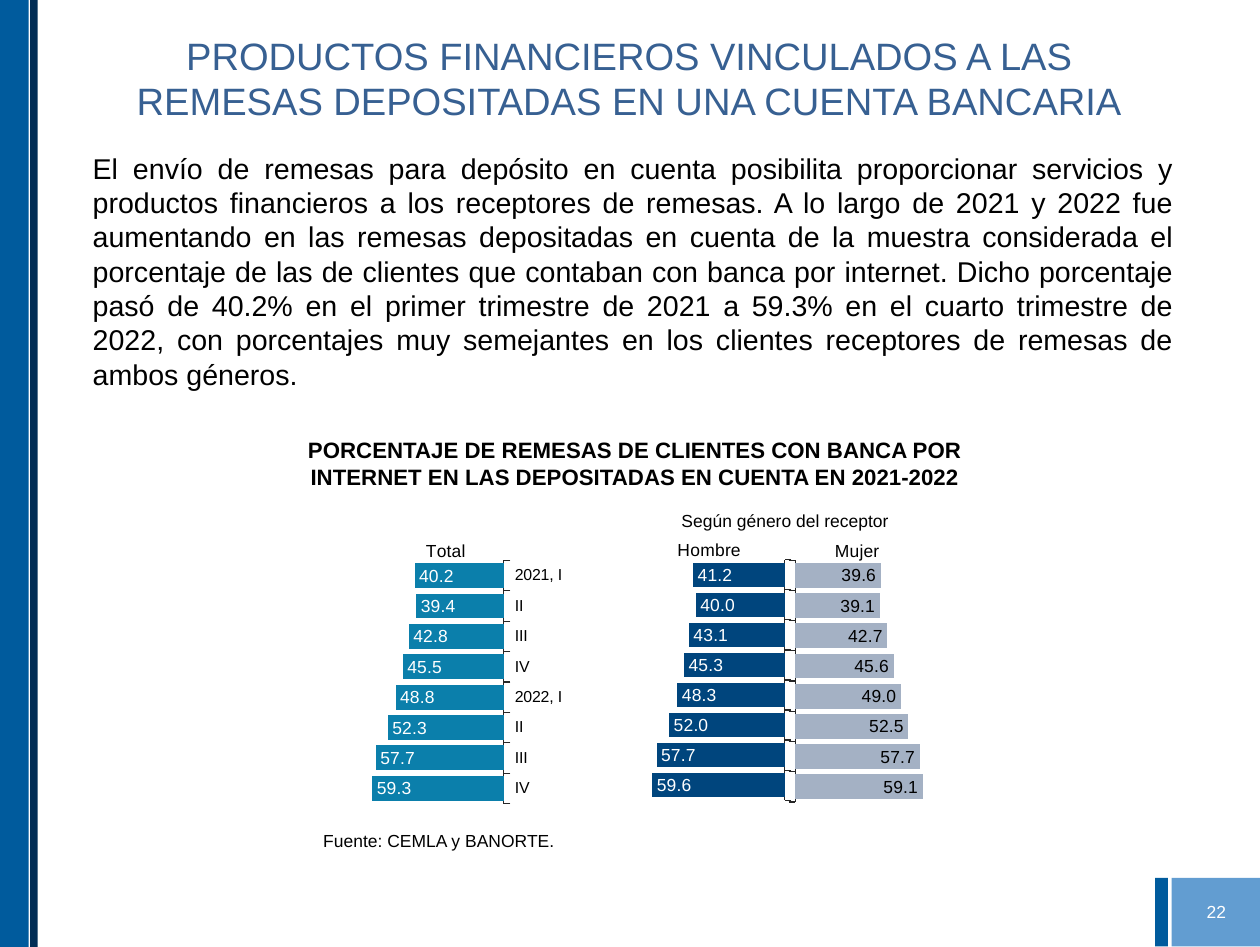
from lxml import etree
from pptx import Presentation
from pptx.chart.data import CategoryChartData
from pptx.dml.color import RGBColor
from pptx.enum import chart as ch, shapes, text
from pptx.oxml.ns import qn
from pptx.util import Pt

BLUE = RGBColor(0x00, 0x5B, 0x9D)
NAVY = RGBColor(0x01, 0x2D, 0x55)
SKY = RGBColor(0x62, 0x9D, 0xD1)
HEAD = RGBColor(0x37, 0x60, 0x92)
TEAL = RGBColor(0x0B, 0x7F, 0xAB)
DARK = RGBColor(0x00, 0x45, 0x7D)
GREY = RGBColor(0xA4, 0xB1, 0xC4)
AXIS = RGBColor(0x26, 0x26, 0x26)
BLACK = RGBColor(0, 0, 0)
WHITE = RGBColor(255, 255, 255)

WIDE, HIGH = 793.7, 596.6
TITLE = "PRODUCTOS FINANCIEROS VINCULADOS A LAS REMESAS DEPOSITADAS EN UNA CUENTA BANCARIA"
BODY = (
    "El envío de remesas para depósito en cuenta posibilita proporcionar servicios y "
    "productos financieros a los receptores de remesas. A lo largo de 2021 y 2022 fue "
    "aumentando en las remesas depositadas en cuenta de la muestra considerada el "
    "porcentaje de las de clientes que contaban con banca por internet. Dicho porcentaje "
    "pasó de 40.2% en el primer trimestre de 2021 a 59.3% en el cuarto trimestre de 2022, "
    "con porcentajes muy semejantes en los clientes receptores de remesas de ambos géneros."
)
CAPTION = ("PORCENTAJE DE REMESAS DE CLIENTES CON BANCA POR INTERNET "
           "EN LAS DEPOSITADAS EN CUENTA EN 2021-2022")
TERMS = ["2021, I", "II", "III", "IV", "2022, I", "II", "III", "IV"]
RANKS = [str(n) for n in range(1, 9)]

# Chart box, bar colour, label colour, title corner, plot area, axis options, values
CHARTS = {
    "Total": dict(
        box=(0, 0, 254.88, 193.68), fill=TEAL, ink=WHITE, corner=(0.265, 0.097),
        plot=(0, 0.177, 0.465, 0.791), flip=True, cats=TERMS,
        vals=(40.2, 39.4, 42.8, 45.5, 48.8, 52.3, 57.7, 59.3)),
    "Mujer": dict(
        box=(244.8, 9.36, 181.44, 183.6), fill=GREY, ink=BLACK, corner=(0.443, 0.05),
        plot=(0.317, 0.135, 0.636, 0.83), flip=False, cats=RANKS,
        vals=(39.6, 39.1, 42.7, 45.6, 49, 52.5, 57.7, 59.1)),
    "Hombre": dict(
        box=(167.76, 0, 255.6, 191.52), fill=DARK, ink=WHITE, corner=(0.228, 0.095),
        plot=(0.035, 0.177, 0.465, 0.791), flip=True, cats=RANKS,
        vals=(41.2, 40, 43.1, 45.3, 48.3, 52, 57.7, 59.6)),
}


def style(font, size, color, bold=False):
    look = dict(name="Arial", size=Pt(size), bold=bold)
    for key, val in look.items():
        setattr(font, key, val)
    font.color.rgb = color


def bar(slide, box, color):
    shape = slide.shapes.add_shape(shapes.MSO_SHAPE.RECTANGLE, *map(Pt, box))
    shape.shadow.inherit = False
    shape.fill.solid()
    shape.fill.fore_color.rgb = color
    shape.line.fill.background()


def write(slide, box, words, size, color=BLACK, align="CENTER", anchor="MIDDLE",
          bold=False):
    frame = slide.shapes.add_textbox(*map(Pt, box)).text_frame
    frame.word_wrap = True
    frame.vertical_anchor = getattr(text.MSO_ANCHOR, anchor)
    para = frame.paragraphs[0]
    para.text = words
    para.alignment = getattr(text.PP_ALIGN, align)
    style(para.runs[0].font, size, color, bold)


def node(tag, **attrs):
    return etree.Element(qn(tag), attrs)


def layout(host, spot, at, inner=False):
    """Give a chart part a manual place, in fractions of the chart."""
    for old in host.findall(qn("c:layout")):
        host.remove(old)
    outer, hand = node("c:layout"), node("c:manualLayout")
    outer.append(hand)
    if inner:
        hand.append(node("c:layoutTarget", val="inner"))
    for key in ("xMode", "yMode"):
        hand.append(node("c:" + key, val="edge"))
    for key, val in zip("xywh", spot):
        hand.append(node("c:" + key, val=str(val)))
    host.insert(at, outer)


def clear():
    props = node("c:spPr")
    props.append(node("a:noFill"))
    line = node("a:ln")
    line.append(node("a:noFill"))
    props.append(line)
    return props


def graph(slide, left, top, name, item):
    data = CategoryChartData(number_format="0.0")
    data.categories = item["cats"]
    data.add_series(name, item["vals"])
    x, y, w, h = item["box"]
    kind = ch.XL_CHART_TYPE.BAR_CLUSTERED
    chart = slide.shapes.add_chart(
        kind, Pt(left + x), Pt(top + y), Pt(w), Pt(h), data).chart
    style(chart.font, 10, BLACK)
    chart.has_legend = False
    chart.has_title = True
    head = chart.chart_title.text_frame
    head.text = name
    style(head.paragraphs[0].runs[0].font, 11, BLACK)
    layout(chart.chart_title._element, item["corner"], 1)

    plot = chart.plots[0]
    plot.gap_width = 22
    plot.vary_by_categories = False
    fill = plot.series[0].format.fill
    fill.solid()
    fill.fore_color.rgb = item["fill"]
    plot.has_data_labels = True
    labels = plot.data_labels
    look = dict(show_value=True, position=ch.XL_LABEL_POSITION.INSIDE_END,
                number_format="0.0", number_format_is_linked=False)
    for key, val in look.items():
        setattr(labels, key, val)
    style(labels.font, 11, item["ink"])

    scale = dict(minimum_scale=0, maximum_scale=85, has_major_gridlines=False,
                 reverse_order=item["flip"], visible=False)
    for key, val in scale.items():
        setattr(chart.value_axis, key, val)
    axis = chart.category_axis
    axis.reverse_order = True
    axis.major_tick_mark = ch.XL_TICK_MARK.OUTSIDE
    axis.format.line.color.rgb = AXIS
    axis.format.line.width = Pt(0.75)
    style(axis.tick_labels.font, 10, BLACK)
    if item["cats"] is RANKS:
        axis.tick_label_position = ch.XL_TICK_LABEL_POSITION.NONE

    root = chart._chartSpace
    area = root.find(".//" + qn("c:plotArea"))
    layout(area, item["plot"], 0, True)
    area.append(clear())
    root.find(qn("c:chart")).addnext(clear())


def frame(slide, w, h):
    """Side bands and page number."""
    bar(slide, (0, 0, 18, h), BLUE)
    bar(slide, (18.9, 0, 4.8, h), NAVY)
    foot = h - 43.6
    bar(slide, (w - 66, foot, 8, 43.2), BLUE)
    bar(slide, (w - 55.7, foot, 55.7, 43.2), SKY)
    write(slide, (w - 51.5, foot + 5.4, 48.2, 31.7), "22", 11, WHITE)


def intro(slide, x, y, w):
    write(slide, (x, y, w, 72), TITLE, 24, HEAD, anchor="TOP")
    write(slide, (x + 2.3, y + 74.9, w, 175.7), BODY, 18, align="JUSTIFY",
          anchor="TOP")


def panel(slide, x, y):
    """Caption, three bar charts and source line."""
    write(slide, (x - 45.4, y - 55.4, 493.2, 56.9), CAPTION, 14, bold=True)
    write(slide, (x - 2.2, y + 199.4, 198, 22.3), "Fuente: CEMLA y BANORTE.", 11,
          align="LEFT")
    for name, item in CHARTS.items():
        graph(slide, x, y, name, item)
    write(slide, (x + 214.9, y + 0.7, 162, 17.3), "Según género del receptor", 11)


def main():
    deck = Presentation()
    deck.slide_width, deck.slide_height = Pt(WIDE), Pt(HIGH)
    slide = deck.slides.add_slide(deck.slide_layouts[6])
    frame(slide, WIDE, HIGH)
    intro(slide, 49, 16.6, 694.8)
    panel(slide, 198.7, 318.8)
    deck.save("out.pptx")


if __name__ == "__main__":
    main()
